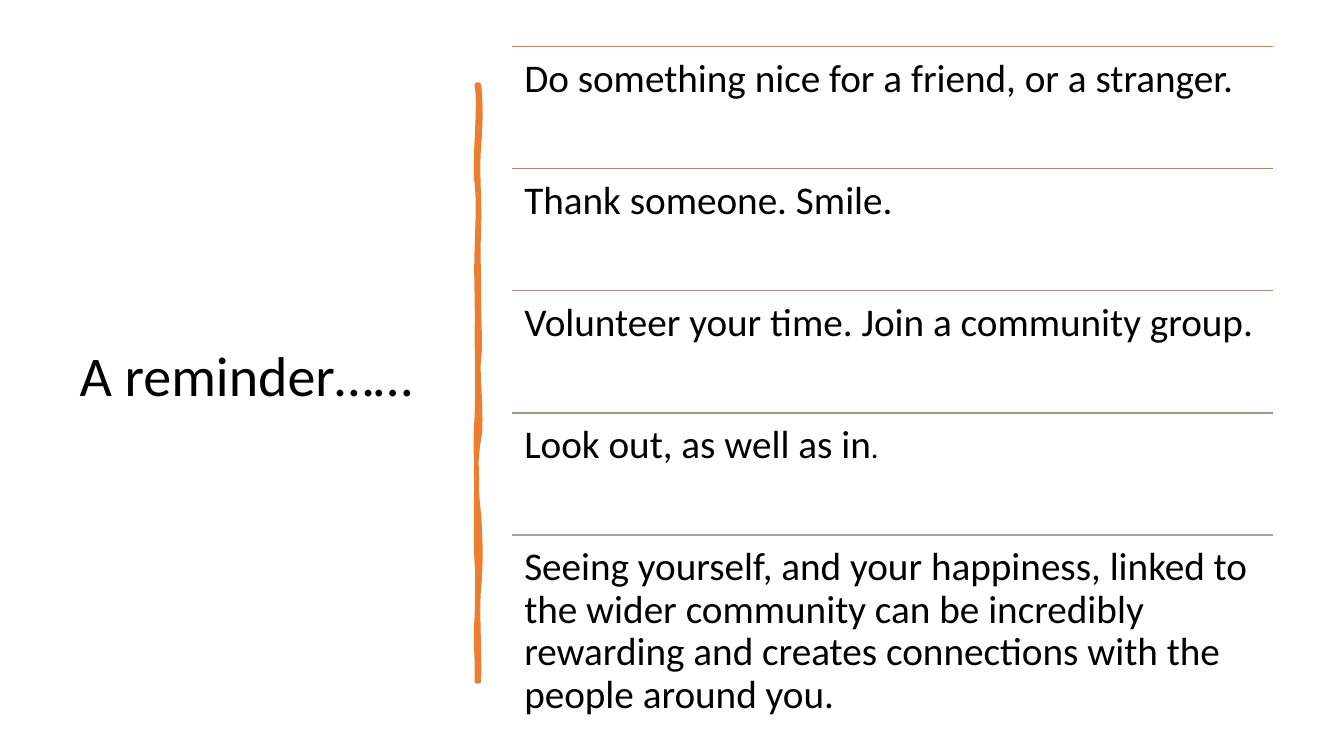
from dataclasses import dataclass

from lxml.etree import SubElement
from pptx import Presentation
from pptx.dml.color import RGBColor
from pptx.enum.shapes import MSO_CONNECTOR
from pptx.enum.text import MSO_ANCHOR, MSO_AUTO_SIZE, PP_ALIGN
from pptx.oxml.ns import qn
from pptx.shapes.autoshape import Shape
from pptx.slide import Slide
from pptx.text.text import TextFrame
from pptx.util import Inches, Pt

Point = tuple[int, int]


@dataclass(frozen=True)
class Theme:
    font: str = "Calibri"
    text: str = "000000"
    accent: str = "ED7D31"
    title_size: float = 40
    body_size: float = 28
    stop_size: float = 22
    rule_width: float = 1
    brush_width: float = 3.25
    line_spacing: float = 0.9
    inset: float = 0.12


@dataclass(frozen=True)
class Box:
    """A place in percent of the slide's width and height."""
    left: float
    top: float
    width: float
    height: float

    def emu(self) -> tuple[int, int, int, int]:
        return (int(WIDTH * self.left / 100), int(HEIGHT * self.top / 100),
                int(WIDTH * self.width / 100), int(HEIGHT * self.height / 100))


@dataclass(frozen=True)
class Reminder:
    rule_color: str
    text: str
    small_end: str = ""


THEME = Theme()
WIDTH, HEIGHT = Inches(13.333), Inches(7.5)
TITLE_BOX = Box(5.18, 9.33, 28.05, 81.47)
FIRST_ROW = Box(38.11, 6.13, 56.63, 16.16)

REMINDERS = [
    Reminder("ED7D31", "Do something nice for a friend, or a stranger."),
    Reminder("D87A51", "Thank someone. Smile."),
    Reminder("C48170", "Volunteer your time. Join a community group."),
    Reminder("B4908B", "Look out, as well as in", "."),
    Reminder("A5A5A5", "Seeing yourself, and your happiness, linked to the wider "
             "community can be incredibly rewarding and creates connections "
             "with the people around you."),
]

# Brush stroke on a square grid of 750 rows: each line holds two handles and an end.
BRUSH_CELL = HEIGHT // 750
BRUSH_COLUMN, BRUSH_ROW = 470, 84
BRUSH_START = (5, 0)
BRUSH_CURVES = [
    ((7, 18), (7, 35), (5, 62)),
    ((3, 89), (6, 111), (5, 142)),
    ((4, 173), (5, 178), (5, 210)),
    ((5, 241), (7, 258), (5, 272)),
    ((3, 286), (9, 330), (5, 352)),
    ((1, 373), (2, 400), (5, 426)),
    ((7, 452), (7, 480), (5, 500)),
    ((3, 519), (6, 566), (5, 592)),
    ((4, 592), (3, 592), (3, 592)),
    ((4, 562), (1, 560), (3, 529)),
    ((4, 499), (4, 486), (3, 473)),
    ((2, 460), (2, 411), (3, 393)),
    ((3, 375), (1, 361), (3, 331)),
    ((4, 302), (4, 289), (3, 251)),
    ((4, 214), (2, 197), (3, 166)),
    ((4, 134), (5, 116), (3, 97)),
    ((0, 79), (7, 20), (3, 0)),
    ((4, 0), (4, 0), (5, 0)),
]


def color(value: str) -> RGBColor:
    return RGBColor.from_string(value)


def format_text(tf: TextFrame, size: float) -> None:
    tf.word_wrap = True
    tf.auto_size = MSO_AUTO_SIZE.NONE
    for p in tf.paragraphs:
        p.alignment = PP_ALIGN.LEFT
        p.line_spacing = THEME.line_spacing
        for r in p.runs:
            r.font.name = THEME.font
            r.font.size = Pt(size)
            r.font.color.rgb = color(THEME.text)


def add_title(s: Slide, text: str) -> None:
    sp = s.shapes.title
    sp.left, sp.top, sp.width, sp.height = TITLE_BOX.emu()
    tf = sp.text_frame
    tf.text = text
    tf.vertical_anchor = MSO_ANCHOR.MIDDLE
    format_text(tf, THEME.title_size)


def brush_point(point: Point) -> Point:
    x, y = point
    return (BRUSH_COLUMN + x) * BRUSH_CELL, (BRUSH_ROW + y) * BRUSH_CELL


def bend_segments(sp: Shape, curves: list[tuple[Point, Point, Point]]) -> None:
    """Turn each straight segment of a freeform into a cubic Bézier curve."""
    segments = list(sp._element.iter(qn("a:lnTo")))
    for segment, curve in zip(segments, curves):
        segment.tag = qn("a:cubicBezTo")
        segment.clear()
        for x, y in map(brush_point, curve):
            SubElement(segment, qn("a:pt"), x=str(x - sp.left), y=str(y - sp.top))


def add_brush(s: Slide) -> None:
    builder = s.shapes.build_freeform(*brush_point(BRUSH_START))
    builder.add_line_segments([brush_point(end) for _, _, end in BRUSH_CURVES], close=True)
    sp = builder.convert_to_shape()
    bend_segments(sp, BRUSH_CURVES)
    sp.shadow.inherit = False
    sp.fill.solid()
    sp.fill.fore_color.rgb = color(THEME.accent)
    sp.line.color.rgb = color(THEME.accent)
    sp.line.width = Pt(THEME.brush_width)


def add_reminder(s: Slide, reminder: Reminder, box: Box) -> None:
    left, top, width, height = box.emu()
    rule = s.shapes.add_connector(MSO_CONNECTOR.STRAIGHT, left, top, left + width, top)
    rule.line.color.rgb = color(reminder.rule_color)
    rule.line.width = Pt(THEME.rule_width)
    SubElement(rule._element.spPr, qn("a:effectLst"))

    tf = s.shapes.add_textbox(left, top, width, height).text_frame
    tf.margin_left = tf.margin_right = tf.margin_top = tf.margin_bottom = Inches(THEME.inset)
    tf.text = reminder.text
    if reminder.small_end:
        tf.paragraphs[0].add_run().text = reminder.small_end
    format_text(tf, THEME.body_size)
    if reminder.small_end:
        tf.paragraphs[0].runs[-1].font.size = Pt(THEME.stop_size)


def main() -> None:
    prs = Presentation()
    prs.slide_width, prs.slide_height = WIDTH, HEIGHT
    s = prs.slides.add_slide(prs.slide_layouts.get_by_name("Title Only"))
    add_title(s, "A reminder……")
    add_brush(s)
    row = FIRST_ROW
    for i, reminder in enumerate(REMINDERS):
        add_reminder(s, reminder,
                     Box(row.left, row.top + i * row.height, row.width, row.height))
    prs.save("out.pptx")


if __name__ == "__main__":
    main()
